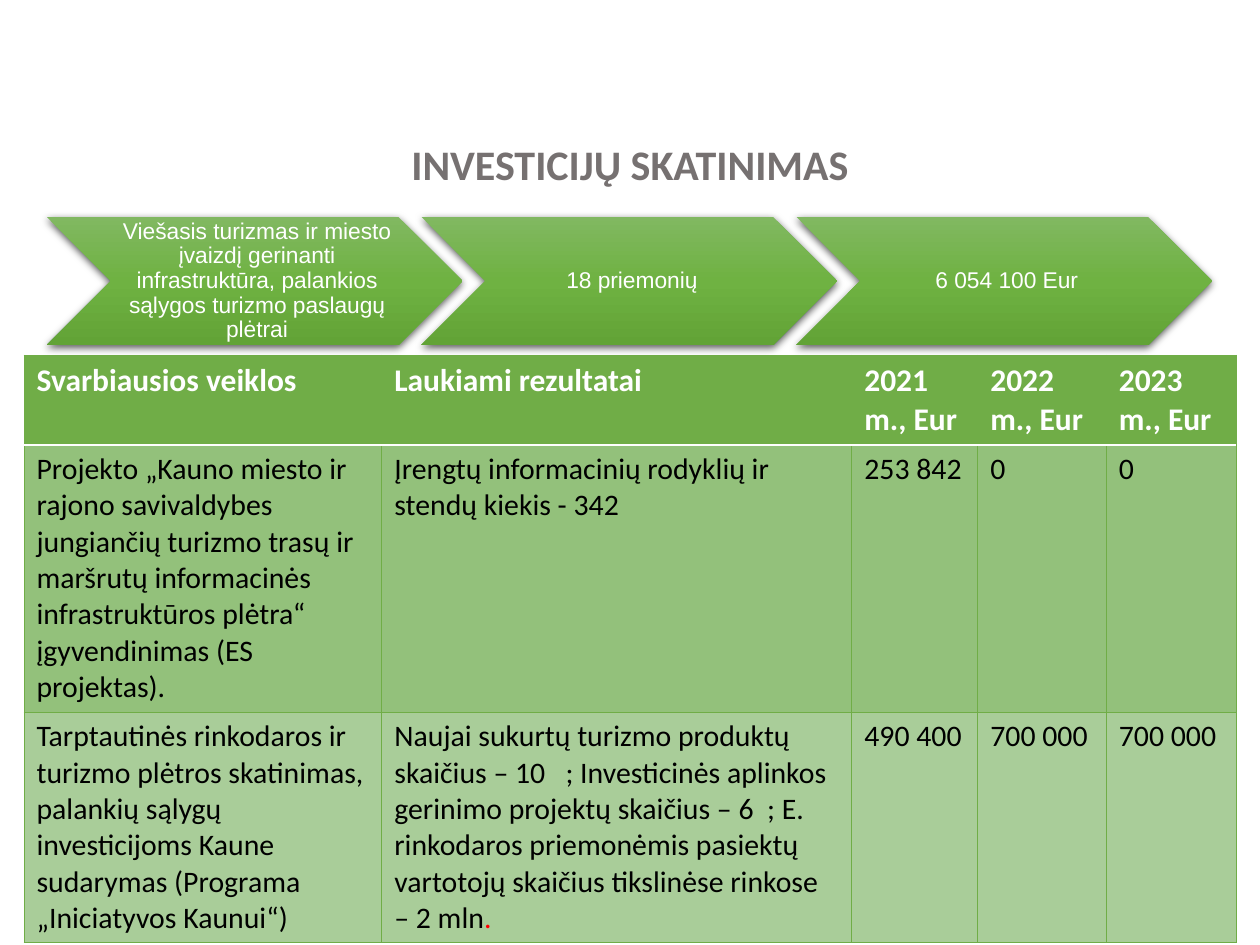
from dataclasses import dataclass

from pptx import Presentation
from pptx.dml.color import RGBColor as RGB
from pptx.enum.shapes import MSO_SHAPE as SHAPE
from pptx.enum.text import MSO_ANCHOR as ANCHOR, MSO_AUTO_SIZE as FIT, PP_ALIGN as ALIGN
from pptx.oxml import parse_xml
from pptx.oxml.ns import nsdecls
from pptx.util import Inches, Pt


@dataclass(frozen=True)
class Theme:
    body: str = "Calibri"
    label: str = "Arial"
    grey: str = "767171"
    green: str = "70AD47"
    white: str = "FFFFFF"
    black: str = "000000"
    red: str = "FF0000"
    bands: tuple = ("93C17B", "A9CD99")
    blend: tuple = ((0, "81B861"), (50, "6FB242"), (100, "62A336"))
    title_size: float = 24
    head_size: float = 18
    cell_size: float = 17
    step_size: float = 13


THEME = Theme()

STEPS = [
    "Viešasis turizmas ir miesto įvaizdį gerinanti infrastruktūra, "
    "palankios sąlygos turizmo paslaugų plėtrai",
    "18 priemonių",
    "6 054 100 Eur",
]

COLS = [2.84, 3.73, 1, 1.02, 1.03]
ROWS = [0.71, 2.12, 1.83]
CELLS = [
    ["Svarbiausios veiklos", "Laukiami rezultatai",
     "2021 m., Eur", "2022 m., Eur", "2023 m., Eur"],
    ["Projekto „Kauno miesto ir rajono savivaldybes jungiančių turizmo trasų ir "
     "maršrutų informacinės infrastruktūros plėtra“ įgyvendinimas (ES projektas).",
     "Įrengtų informacinių rodyklių ir stendų kiekis - 342",
     "253 842", "0", "0"],
    ["Tarptautinės rinkodaros ir turizmo plėtros skatinimas, palankių sąlygų "
     "investicijoms Kaune sudarymas (Programa „Iniciatyvos Kaunui“)",
     "Naujai sukurtų turizmo produktų skaičius – 10   ; Investicinės aplinkos "
     "gerinimo projektų skaičius – 6  ; E. rinkodaros priemonėmis pasiektų "
     "vartotojų skaičius tikslinėse rinkose – 2 mln",
     "490 400", "700 000", "700 000"],
]


def style(part, face, size, color, bold=False):
    """Format every run of a paragraph."""
    for run in part.runs:
        font = run.font
        font.name, font.size, font.bold = face, Pt(size), bold
        font.color.rgb = RGB.from_string(color)


def place(shape, left, top, width, height):
    shape.left, shape.top = Inches(left), Inches(top)
    shape.width, shape.height = Inches(width), Inches(height)


def add_title(slide, box):
    title = slide.shapes.title
    place(title, *box)
    frame = title.text_frame
    frame.text = "INVESTICIJŲ SKATINIMAS"
    frame.auto_size = FIT.NONE
    frame.vertical_anchor = ANCHOR.MIDDLE
    part = frame.paragraphs[0]
    part.alignment, part.line_spacing = ALIGN.CENTER, 0.9
    style(part, THEME.body, THEME.title_size, THEME.grey, True)


def shade(shape):
    """Give a shape the three-stop blend and a soft shadow."""
    stops = "".join(
        f'<a:gs pos="{spot * 1000}"><a:srgbClr val="{color}"/></a:gs>'
        for spot, color in THEME.blend)
    shape.line.fill.background()
    shape.fill.background()
    props = shape.element.spPr
    blend = parse_xml(
        f'<a:gradFill {nsdecls("a")} rotWithShape="1"><a:gsLst>{stops}</a:gsLst>'
        '<a:lin ang="5400000" scaled="0"/></a:gradFill>')
    props.replace(props.find("{*}noFill"), blend)
    shape.shadow.inherit = False
    props.find("{*}effectLst").append(parse_xml(
        f'<a:outerShdw {nsdecls("a")} blurRad="{Pt(4.5)}" dist="{Pt(1.5)}" '
        f'dir="5400000" algn="ctr" rotWithShape="0"><a:srgbClr val="{THEME.black}">'
        '<a:alpha val="63000"/></a:srgbClr></a:outerShdw>'))


def add_steps(slide, box):
    left, top, width, height = box
    wide = 3.3
    pitch = (width - wide) / (len(STEPS) - 1)
    for index, text in enumerate(STEPS):
        step = slide.shapes.add_shape(SHAPE.CHEVRON, 0, 0, 0, 0)
        place(step, left + index * pitch, top, wide, height)
        shade(step)
        frame = step.text_frame
        frame.text = text
        frame.word_wrap = True
        frame.vertical_anchor = ANCHOR.MIDDLE
        frame.margin_left = Inches(0.06)
        frame.margin_right = frame.margin_top = frame.margin_bottom = Inches(0.02)
        part = frame.paragraphs[0]
        part.alignment, part.line_spacing = ALIGN.CENTER, 0.9
        style(part, THEME.label, THEME.step_size, THEME.white)


def edge(cell, row):
    """Draw green borders, with a white rule under the header."""
    props = cell._tc.get_or_add_tcPr()
    white = {(0, "B"), (1, "T")}
    for index, side in enumerate("LRTB"):
        color, width = (THEME.white, 1) if (row, side) in white else (THEME.green, 0.5)
        props.insert(index, parse_xml(
            f'<a:ln{side} {nsdecls("a")} w="{Pt(width)}"><a:solidFill>'
            f'<a:srgbClr val="{color}"/></a:solidFill></a:ln{side}>'))


def add_grid(slide, box):
    left, top, width, height = map(Inches, box)
    grid = slide.shapes.add_table(
        len(ROWS), len(COLS), left, top, width, height).table
    for col, size in zip(grid.columns, COLS):
        col.width = Inches(size)
    for row, size in zip(grid.rows, ROWS):
        row.height = Inches(size)
    fills = (THEME.green, *THEME.bands)
    for row, texts in enumerate(CELLS):
        head = row == 0
        size = THEME.head_size if head else THEME.cell_size
        color = THEME.white if head else THEME.black
        for col, text in enumerate(texts):
            cell = grid.cell(row, col)
            cell.text_frame.text = text
            cell.fill.solid()
            cell.fill.fore_color.rgb = RGB.from_string(fills[row])
            style(cell.text_frame.paragraphs[0], THEME.body, size, color, head)
            edge(cell, row)
    # Red full stop after the last result
    part = grid.cell(2, 1).text_frame.paragraphs[0]
    part.add_run().text = "."
    style(part, THEME.body, THEME.cell_size, THEME.black)
    part.runs[-1].font.color.rgb = RGB.from_string(THEME.red)


def main():
    deck = Presentation()
    deck.slide_width, deck.slide_height = Inches(10), Inches(7.5)
    slide = deck.slides.add_slide(deck.slide_layouts[5])
    add_title(slide, (0.69, 0.94, 8.62, 0.77))
    add_grid(slide, (0.19, 2.82, sum(COLS), sum(ROWS)))
    add_steps(slide, (0.37, 1.72, 9.25, 1.02))
    deck.save("out.pptx")


if __name__ == "__main__":
    main()
